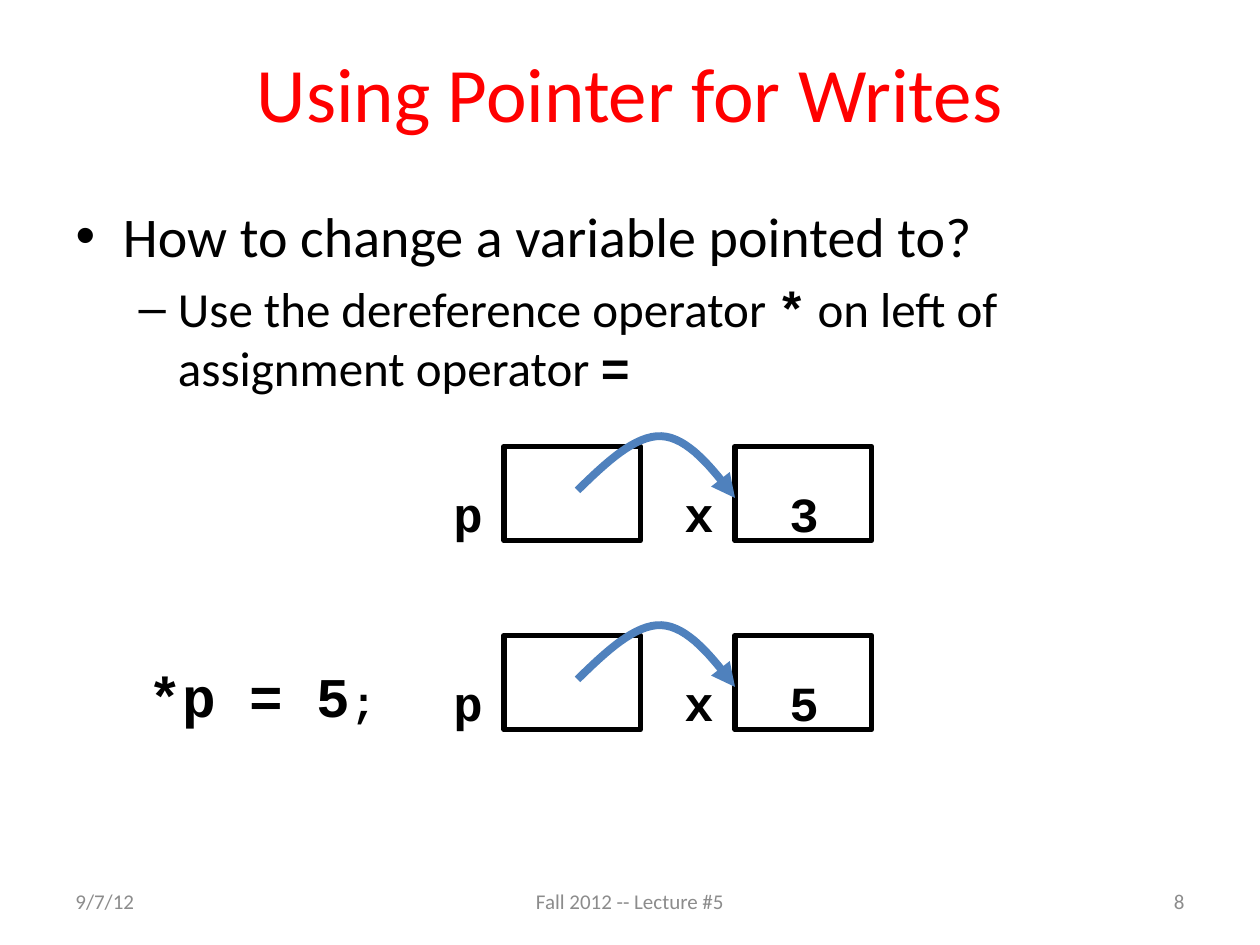
import pptx
import pptx.dml.color
import pptx.enum.shapes
import pptx.enum.text
import pptx.oxml.ns
import pptx.util
from lxml import etree

COLORS = {"title": "FF0000", "ink": "000000", "muted": "8C8C8C", "arrow": "4F81BD"}
SANS, MONO = "Calibri", "Courier New"
COLUMNS, ROWS = 120, 90
ALIGN = pptx.enum.text.PP_ALIGN
ANCHOR = pptx.enum.text.MSO_ANCHOR


def rgb(name):
    return pptx.dml.color.RGBColor.from_string(COLORS[name])


def write(paragraph, text, size=28, font=SANS, color="ink", bold=False):
    run = paragraph.add_run()
    run.text = text
    run.font.size = pptx.util.Pt(size)
    run.font.name = font
    run.font.bold = bold
    run.font.color.rgb = rgb(color)


def bezier(start, control1, control2, end, steps=16):
    """Points along a cubic curve, without its start."""
    points = []
    for step in range(1, steps + 1):
        t = step / steps
        weights = ((1 - t) ** 3, 3 * t * (1 - t) ** 2, 3 * t ** 2 * (1 - t), t ** 3)
        corners = (start, control1, control2, end)
        points.append(tuple(sum(w * corner[axis] for w, corner in zip(weights, corners))
                            for axis in (0, 1)))
    return points


class SlideBuilder:
    """Places elements on a grid of 120 columns by 90 rows."""

    def __init__(self, presentation):
        self.column = presentation.slide_width / COLUMNS
        self.row = presentation.slide_height / ROWS
        self.slide = presentation.slides.add_slide(presentation.slide_layouts[1])

    def point(self, column, row):
        return round(column * self.column), round(row * self.row)

    def frame(self, left, top, width, height):
        return self.point(left, top) + self.point(width, height)

    def place(self, shape, *area):
        shape.left, shape.top, shape.width, shape.height = self.frame(*area)

    def title(self, text, *area):
        shape = self.slide.shapes.title
        self.place(shape, *area)
        paragraph = shape.text_frame.paragraphs[0]
        paragraph.alignment = ALIGN.CENTER
        write(paragraph, text, size=44, color="title")

    def bullets(self, items, *area):
        shape = self.slide.placeholders[1]
        self.place(shape, *area)
        text_frame = shape.text_frame
        for index, (level, size, runs) in enumerate(items):
            paragraph = text_frame.add_paragraph() if index else text_frame.paragraphs[0]
            paragraph.level = level
            for text, font in runs:
                write(paragraph, text, size=size, font=font, bold=font == MONO)

    def text(self, parent, runs, *area, align=ALIGN.LEFT, anchor=ANCHOR.TOP, wrap=False):
        text_frame = parent.shapes.add_textbox(*self.frame(*area)).text_frame
        text_frame.word_wrap = wrap
        text_frame.vertical_anchor = anchor
        paragraph = text_frame.paragraphs[0]
        paragraph.alignment = align
        for text, style in runs:
            write(paragraph, text, **style)

    def outline(self, shape, color, width):
        shape.shadow.inherit = False
        shape.fill.background()
        shape.line.color.rgb = rgb(color)
        shape.line.width = pptx.util.Pt(width)

    def box(self, parent, *area):
        rectangle = pptx.enum.shapes.MSO_SHAPE.RECTANGLE
        self.outline(parent.shapes.add_shape(rectangle, *self.frame(*area)), "ink", 3)

    def curved_arrow(self, parent, start, *curves):
        points, current = [], start
        for curve in curves:
            points += bezier(current, *curve)
            current = curve[-1]
        builder = parent.shapes.build_freeform(*self.point(*start))
        builder.add_line_segments([self.point(*point) for point in points], close=False)
        shape = builder.convert_to_shape()
        self.outline(shape, "arrow", 4.5)
        line = shape.element.spPr.find(pptx.oxml.ns.qn("a:ln"))
        etree.SubElement(line, pptx.oxml.ns.qn("a:tailEnd"), type="triangle")

    def memory(self, top, value):
        """Variable p pointing to variable x, which holds the value."""
        group = self.slide.shapes.add_group_shape()
        letter = {"font": MONO, "bold": True}
        for name, left in (("p", 48), ("x", 70)):
            self.box(group, left, top, 13, 9)
            self.text(group, [(name, letter)], left - 6, top + 3, 5.2, 6.84)
        self.text(group, [(value, letter)], 74, top + 3, 5.2, 6.84)
        self.curved_arrow(
            group, (55, top + 4.2),
            ((57.7, top + 1.56), (60.5, top - 1.08), (63, top - 0.96)),
            ((65.5, top - 0.84), (67.8, top + 2.04), (70, top + 4.92)))


def main():
    presentation = pptx.Presentation()
    presentation.slide_width = pptx.util.Inches(10)
    presentation.slide_height = pptx.util.Inches(7.5)
    builder = SlideBuilder(presentation)

    # Title and list
    builder.title("Using Pointer for Writes", 6, 1.2, 108, 15)
    builder.bullets([
        (0, 32, [("How to change a variable pointed to?", SANS)]),
        (1, 28, [("Use the dereference operator ", SANS), ("*", MONO),
                 (" on left of assignment operator ", SANS), ("=", MONO)]),
    ], 6, 18.6, 108, 59.4)

    # Memory before and after the assignment
    builder.memory(42.5, "3")
    builder.memory(60.5, "5")
    code = {"font": MONO, "bold": True}
    builder.text(builder.slide, [("*p = 5", dict(code, size=32)), (";", dict(code, size=24))],
                 13, 62.4, 24, 7.56)

    # Footer
    for text, left, width, align in (
            ("9/7/12", 6, 28, ALIGN.LEFT),
            ("Fall 2012 -- Lecture #5", 41, 38, ALIGN.CENTER),
            ("8", 86, 28, ALIGN.RIGHT)):
        builder.text(builder.slide, [(text, {"size": 12, "color": "muted"})],
                     left, 83.4, width, 4.8, align=align, anchor=ANCHOR.MIDDLE, wrap=True)

    presentation.save("out.pptx")


if __name__ == "__main__":
    main()
